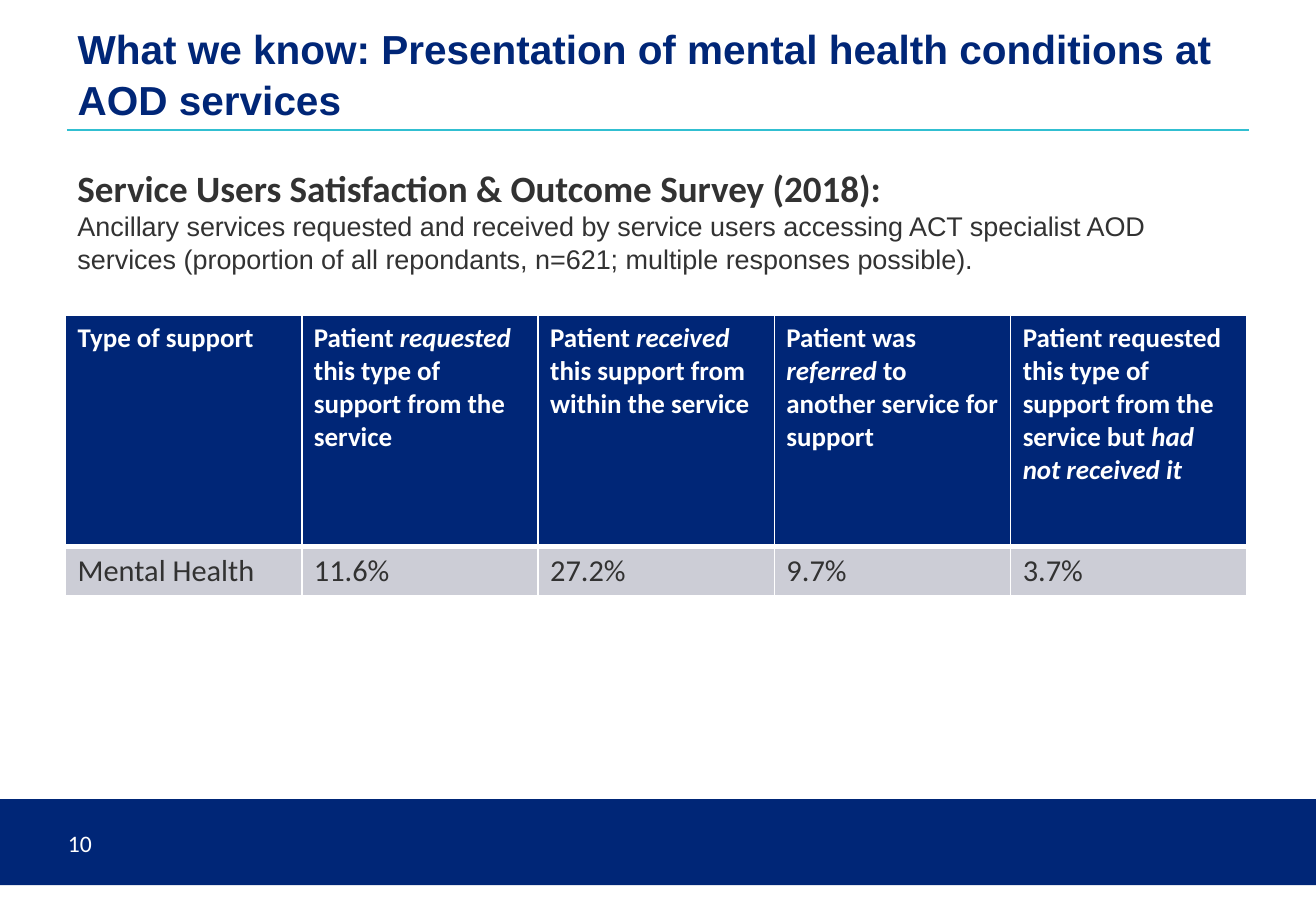
from dataclasses import dataclass

from lxml.etree import SubElement
from pptx import Presentation
from pptx.dml.color import RGBColor
from pptx.enum.shapes import MSO_CONNECTOR, MSO_SHAPE
from pptx.enum.text import MSO_ANCHOR, MSO_AUTO_SIZE, PP_ALIGN
from pptx.oxml.ns import qn
from pptx.util import Cm, Pt


@dataclass(frozen=True)
class Theme:
    navy: str = "002677"
    teal: str = "31BFD1"
    dark: str = "323232"
    grey: str = "CCCDD6"
    white: str = "FFFFFF"
    sans: str = "Arial"
    text: str = "Calibri"
    title: int = 24
    lead: int = 22
    value: int = 18
    small: int = 16
    number: int = 14


class Page:
    def __init__(self, deck, theme):
        self.theme = theme
        self.slide = deck.slides.add_slide(deck.slide_layouts[5])
        self.shapes = self.slide.shapes

    def add_runs(self, para, words, size, color, face, bold=False):
        """Add runs to a paragraph; words between asterisks are italic."""
        for i, part in enumerate(words.split("*")):
            if part:
                run = para.add_run()
                run.text = part
                font = run.font
                font.name, font.size = face, Pt(size)
                font.bold, font.italic = bold, i % 2 == 1
                font.color.rgb = RGBColor.from_string(color)

    def band(self, left, top, width, height):
        band = self.shapes.add_shape(
            MSO_SHAPE.RECTANGLE, Cm(left), Cm(top), Cm(width), Cm(height))
        band.shadow.inherit = False
        band.fill.solid()
        band.fill.fore_color.rgb = RGBColor.from_string(self.theme.navy)
        band.line.fill.background()

    def rule(self, left, right, top):
        rule = self.shapes.add_connector(
            MSO_CONNECTOR.STRAIGHT, Cm(left), Cm(top), Cm(right), Cm(top))
        rule.line.color.rgb = RGBColor.from_string(self.theme.teal)
        rule.line.width = Pt(1)
        SubElement(rule.element.spPr, qn("a:effectLst"))

    def title(self, words, left, top, width, height):
        title = self.shapes.title
        title.left, title.top = Cm(left), Cm(top)
        title.width, title.height = Cm(width), Cm(height)
        frame = title.text_frame
        frame.auto_size = MSO_AUTO_SIZE.NONE
        frame.vertical_anchor = MSO_ANCHOR.BOTTOM
        para = frame.paragraphs[0]
        para.alignment = PP_ALIGN.LEFT
        para.line_spacing = 1.05
        self.add_runs(para, words, self.theme.title, self.theme.navy,
                      self.theme.sans, True)

    def text(self, paras, left, top, width, height, anchor=MSO_ANCHOR.TOP):
        """Add a text box; each item of paras holds the arguments of add_runs."""
        box = self.shapes.add_textbox(
            Cm(left), Cm(top), Cm(width), Cm(height))
        frame = box.text_frame
        frame.word_wrap = True
        frame.vertical_anchor = anchor
        for i, item in enumerate(paras):
            para = frame.add_paragraph() if i else frame.paragraphs[0]
            self.add_runs(para, *item)

    def edge(self, cell, top, bottom):
        """Draw white cell borders, with the given top and bottom widths."""
        props = cell._tc.get_or_add_tcPr()
        sides = {"a:lnL": 1, "a:lnR": 1, "a:lnT": top, "a:lnB": bottom}
        for i, (side, width) in enumerate(sides.items()):
            line = SubElement(props, qn(side), w=str(Pt(width)))
            fill = SubElement(line, qn("a:solidFill"))
            SubElement(fill, qn("a:srgbClr"), val=self.theme.white)
            props.remove(line)
            props.insert(i, line)

    def table(self, rows, left, top, width, heights):
        theme = self.theme
        count = len(rows[0])
        table = self.shapes.add_table(
            len(rows), count, Cm(left), Cm(top), Cm(width),
            Cm(sum(heights))).table
        for col in table.columns:
            col.width = Cm(width / count)
        looks = (
            (theme.navy, theme.small, theme.white, True, 1, 3),
            (theme.grey, theme.value, theme.dark, False, 3, 1),
        )
        for r, (row, look) in enumerate(zip(rows, looks)):
            table.rows[r].height = Cm(heights[r])
            back, size, color, bold, above, below = look
            for c, words in enumerate(row):
                cell = table.cell(r, c)
                cell.fill.solid()
                cell.fill.fore_color.rgb = RGBColor.from_string(back)
                self.edge(cell, above, below)
                self.add_runs(cell.text_frame.paragraphs[0], words, size,
                              color, theme.text, bold)


def main():
    deck = Presentation()
    deck.slide_width, deck.slide_height = Cm(27.51), Cm(19.05)
    theme = Theme()
    page = Page(deck, theme)
    left = 1.37

    page.band(0, 16.71, 27.51, 1.8)
    page.rule(1.4, 26.11, 2.72)
    page.title("What we know: Presentation of mental health conditions at "
               "AOD services", left, 0.76, 24.77, 1.96)
    page.text([("10", theme.number, theme.white, theme.text)],
              1.17, 17.12, 7.62, 1.02, MSO_ANCHOR.MIDDLE)
    page.table([
        ["Type of support",
         "Patient *requested* this type of support from the service",
         "Patient *received* this support from within the service",
         "Patient was *referred* to another service for support",
         "Patient requested this type of support from the service but "
         "*had not received it*"],
        ["Mental Health", "11.6%", "27.2%", "9.7%", "3.7%"],
    ], left, 6.6, 24.7, (4.83, 1.02))
    page.text([
        ("Service Users Satisfaction & Outcome Survey (2018):",
         theme.lead, theme.dark, theme.text, True),
        ("Ancillary services requested and received by service users "
         "accessing ACT specialist AOD services (proportion of all "
         "repondants, n=621; multiple responses possible).",
         theme.small, theme.dark, theme.sans),
    ], left, 3.33, 24.99, 2.57)

    deck.save("out.pptx")


if __name__ == "__main__":
    main()
